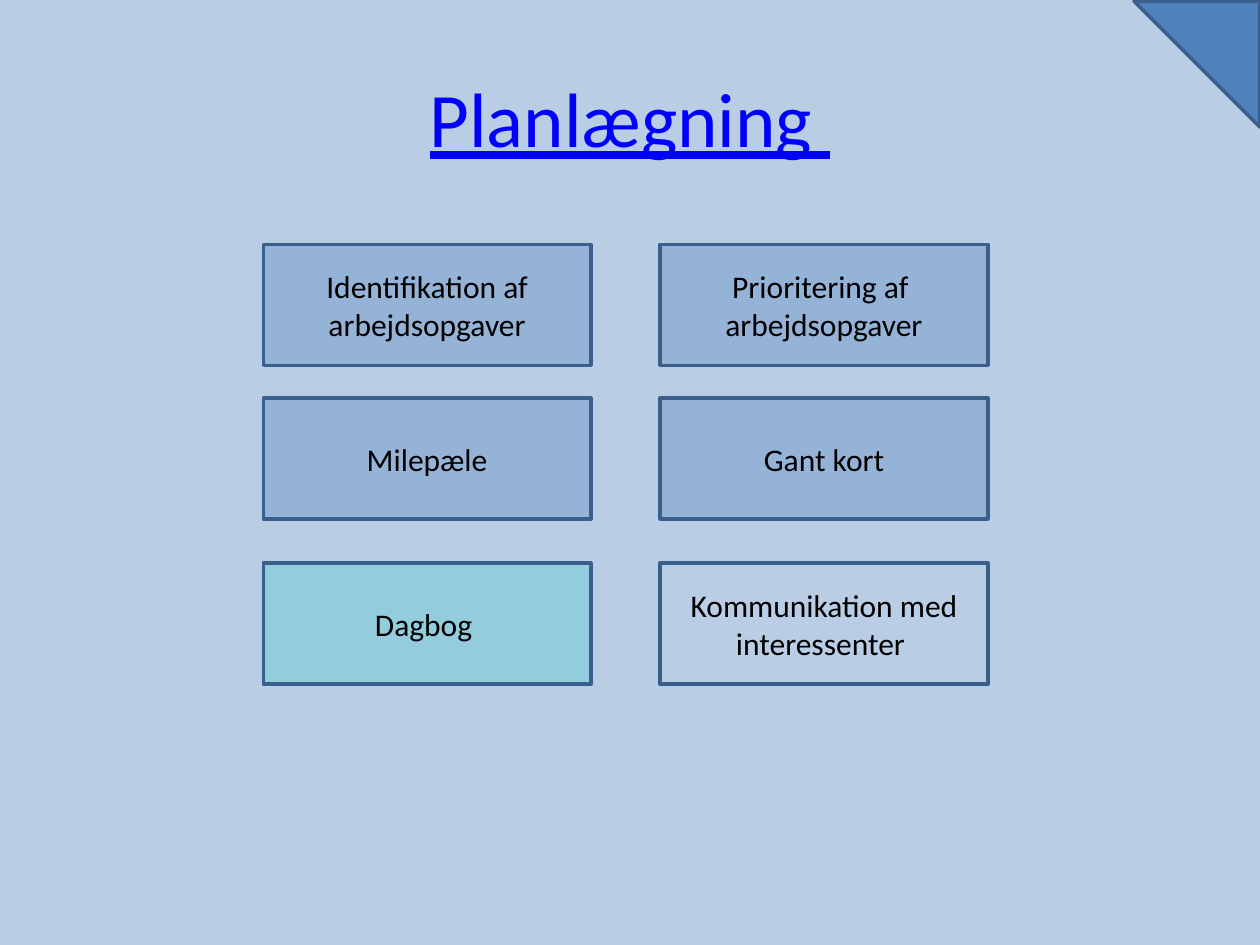
"""Build a planning slide with a titled grid of six topic boxes."""
from dataclasses import dataclass

from pptx import Presentation
from pptx.dml.color import RGBColor
from pptx.enum.shapes import MSO_SHAPE
from pptx.enum.text import MSO_ANCHOR, PP_ALIGN
from pptx.util import Inches, Pt

RECTANGLE = MSO_SHAPE.RECTANGLE
RIGHT_TRIANGLE = MSO_SHAPE.RIGHT_TRIANGLE
MIDDLE = MSO_ANCHOR.MIDDLE
CENTER = PP_ALIGN.CENTER

COLORS = {
    "background": "B9CDE5",
    "planning": "95B3D7",
    "diary": "93CDDD",
    "corner": "4F81BD",
    "outline": "3A5F8C",
    "title": "0000FF",
    "text": "000000",
}
FONT = "Calibri"
SLIDE_WIDTH, SLIDE_HEIGHT = 10, 7.5
COLUMN_LEFTS = (2.09, 5.24)
ROW_TOPS = (1.94, 3.16, 4.47)
BOX_WIDTH, BOX_HEIGHT = 2.6, 0.96
CORNER_SIZE = 1


@dataclass(frozen=True)
class Topic:
    text: str
    column: int
    row: int
    fill: str = "planning"


TOPICS = (
    Topic("Identifikation af arbejdsopgaver", 0, 0),
    Topic("Prioritering af \narbejdsopgaver", 1, 0),
    Topic("Milepæle", 0, 1),
    Topic("Gant kort", 1, 1),
    Topic("Dagbog ", 0, 2, "diary"),
    Topic("Kommunikation med interessenter ", 1, 2, "background"),
)


def color(name: str) -> RGBColor:
    return RGBColor.from_string(COLORS[name])


def write_text(shape, text: str, size: float, color_name: str, underline: bool = False) -> None:
    frame = shape.text_frame
    frame.word_wrap = True
    frame.vertical_anchor = MIDDLE
    frame.text = text
    for paragraph in frame.paragraphs:
        paragraph.alignment = CENTER
        for run in paragraph.runs:
            run.font.name = FONT
            run.font.size = Pt(size)
            run.font.underline = underline
            run.font.color.rgb = color(color_name)


def add_outlined_shape(slide, kind, left: float, top: float, width: float, height: float, fill: str):
    shape = slide.shapes.add_shape(kind, Inches(left), Inches(top), Inches(width), Inches(height))
    shape.shadow.inherit = False
    shape.fill.solid()
    shape.fill.fore_color.rgb = color(fill)
    shape.line.color.rgb = color("outline")
    shape.line.width = Pt(2)
    return shape


def add_title(slide, text: str) -> None:
    margin = SLIDE_WIDTH * 0.05
    title = slide.shapes.add_textbox(
        Inches(margin), Inches(SLIDE_HEIGHT * 0.04),
        Inches(SLIDE_WIDTH - 2 * margin), Inches(SLIDE_HEIGHT / 6),
    )
    write_text(title, text, 44, "title", underline=True)


def add_topic(slide, topic: Topic) -> None:
    box = add_outlined_shape(
        slide, RECTANGLE, COLUMN_LEFTS[topic.column], ROW_TOPS[topic.row],
        BOX_WIDTH, BOX_HEIGHT, topic.fill,
    )
    write_text(box, topic.text, 18, "text")


def main() -> None:
    presentation = Presentation()
    presentation.slide_width = Inches(SLIDE_WIDTH)
    presentation.slide_height = Inches(SLIDE_HEIGHT)
    slide = presentation.slides.add_slide(presentation.slide_layouts[6])
    slide.background.fill.solid()
    slide.background.fill.fore_color.rgb = color("background")

    add_title(slide, "Planlægning ")
    for topic in TOPICS:
        add_topic(slide, topic)
    corner = add_outlined_shape(
        slide, RIGHT_TRIANGLE, SLIDE_WIDTH - CORNER_SIZE, 0.01, CORNER_SIZE, CORNER_SIZE, "corner",
    )
    corner.rotation = 180
    presentation.save("out.pptx")


if __name__ == "__main__":
    main()
